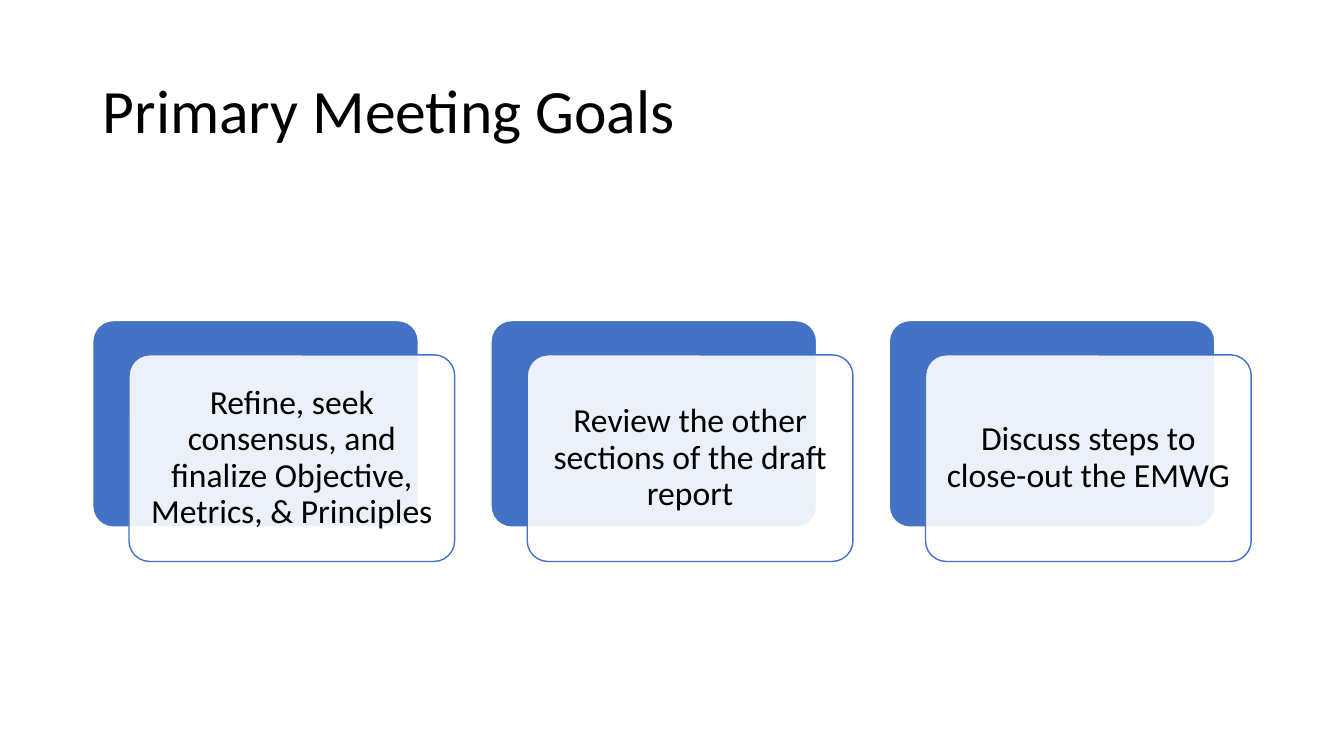
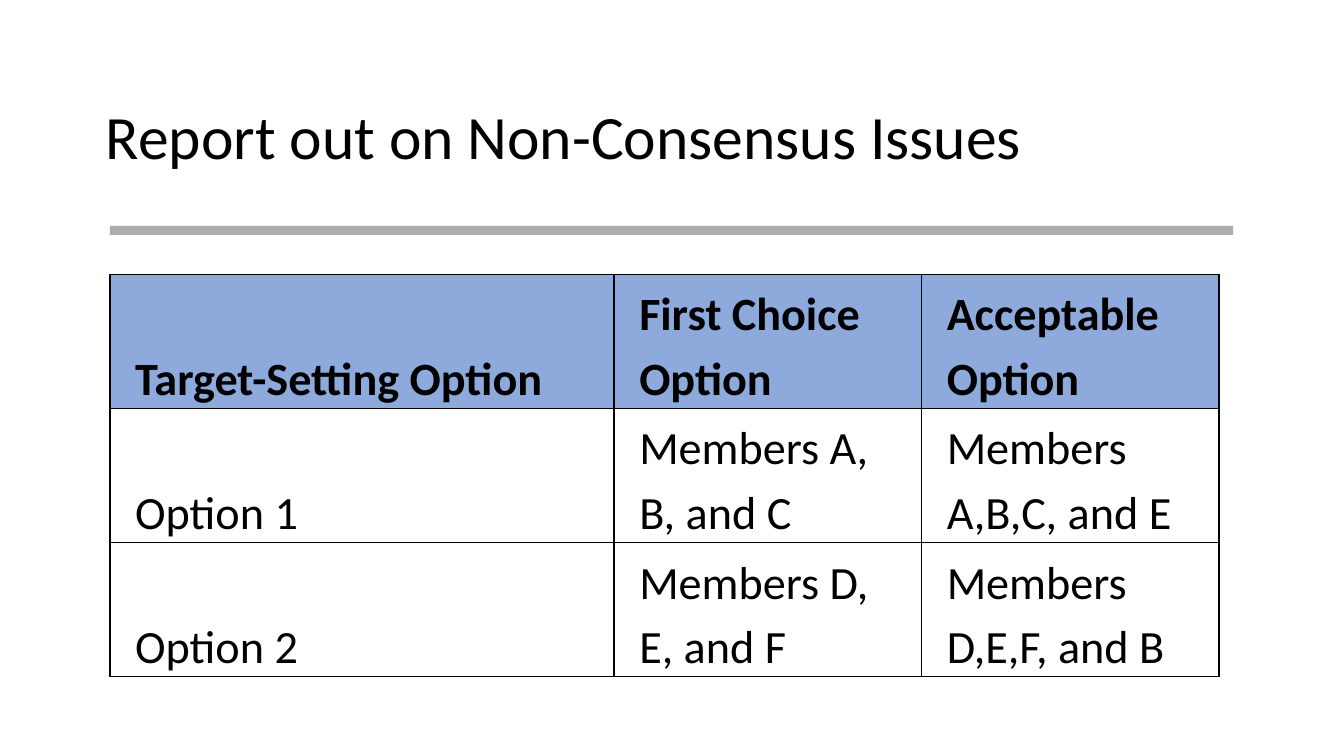
from lxml import etree
from pptx import Presentation
from pptx.dml.color import RGBColor
from pptx.enum.shapes import MSO_SHAPE as SHAPE
from pptx.enum.text import MSO_ANCHOR as ANCHOR, MSO_AUTO_SIZE as AUTO_SIZE, PP_ALIGN as ALIGN
from pptx.oxml.ns import qn
from pptx.util import Inches, Pt

BLACK = RGBColor(0x00, 0x00, 0x00)
WHITE = RGBColor(0xFF, 0xFF, 0xFF)
BLUE = RGBColor(0x44, 0x72, 0xC4)
HEADER_BLUE = RGBColor(0x8E, 0xA9, 0xDB)
GRAY = RGBColor(0x80, 0x80, 0x80)
FONT = "Calibri"
TITLE_ONLY = 5

GOALS = [
    "Refine, seek consensus, and finalize Objective, Metrics, & Principles",
    "Review the other sections of the draft report",
    "Discuss steps to close-out the EMWG",
]
OPTIONS = [
    ["Target-Setting Option", "First Choice Option", "Acceptable Option"],
    ["Option 1", "Members A, B, and C", "Members A,B,C, and E"],
    ["Option 2", "Members D, E, and F", "Members D,E,F, and B"],
]


def write_text(tf, text, size, bold=False, align=ALIGN.LEFT, spacing=0.9):
    tf.word_wrap = True
    p = tf.paragraphs[0]
    p.alignment = align
    p.line_spacing = spacing
    r = p.add_run()
    r.text = text
    r.font.name = FONT
    r.font.size = Pt(size)
    r.font.bold = bold
    r.font.color.rgb = BLACK


def set_margins(target, left, top, right, bottom):
    target.margin_left, target.margin_top = Inches(left), Inches(top)
    target.margin_right, target.margin_bottom = Inches(right), Inches(bottom)


def add_titled_slide(prs, title, left, top, width, height=1.45):
    s = prs.slides.add_slide(prs.slide_layouts[TITLE_ONLY])
    sp = s.shapes.title
    sp.left, sp.top = Inches(left), Inches(top)
    sp.width, sp.height = Inches(width), Inches(height)
    tf = sp.text_frame
    tf.auto_size = AUTO_SIZE.NONE
    tf.vertical_anchor = ANCHOR.MIDDLE
    write_text(tf, title, 44)
    return s


def add_box(s, kind, left, top, width, height, fill, line=None, opacity=100):
    sp = s.shapes.add_shape(kind, Inches(left), Inches(top), Inches(width), Inches(height))
    sp.shadow.inherit = False
    sp.fill.solid()
    sp.fill.fore_color.rgb = fill
    if opacity < 100:
        color = sp.fill._xPr.find(qn("a:solidFill"))[0]
        etree.SubElement(color, qn("a:alpha"), val=str(opacity * 1000))
    if line is None:
        sp.line.fill.background()
    else:
        sp.line.color.rgb = line
        sp.line.width = Pt(1)
    return sp


def add_goal_card(s, text, left, top, width=3.23, height=2.05):
    """Draw a blue card with a translucent text card shifted over it."""
    back = add_box(s, SHAPE.ROUNDED_RECTANGLE, left, top, width, height, BLUE, WHITE)
    front = add_box(s, SHAPE.ROUNDED_RECTANGLE, left + 0.36, top + 0.34, width, height,
                    WHITE, BLUE, opacity=90)
    for card in (back, front):
        card.adjustments[0] = 0.1
    tf = front.text_frame
    tf.vertical_anchor = ANCHOR.MIDDLE
    set_margins(tf, 0.1, 0.1, 0.1, 0.1)
    write_text(tf, text, 24, align=ALIGN.CENTER)


def set_borders(cell, color=BLACK, width=Pt(1)):
    tcPr = cell._tc.get_or_add_tcPr()
    for i, side in enumerate(("lnL", "lnR", "lnT", "lnB")):
        ln = etree.Element(qn(f"a:{side}"), w=str(width))
        fill = etree.SubElement(ln, qn("a:solidFill"))
        etree.SubElement(fill, qn("a:srgbClr"), val=str(color))
        tcPr.insert(i, ln)


def add_options_table(s, rows, left, top, col_widths=(5, 3.05, 2.95), row_height=1.33):
    frame = s.shapes.add_table(len(rows), len(col_widths), Inches(left), Inches(top),
                               Inches(sum(col_widths)), Inches(row_height * len(rows)))
    table = frame.table
    for column, width in zip(table.columns, col_widths):
        column.width = Inches(width)
    for i, row in enumerate(rows):
        is_header = i == 0
        for j, text in enumerate(row):
            cell = table.cell(i, j)
            cell.vertical_anchor = ANCHOR.BOTTOM
            set_margins(cell, 0.25, 0.03, 0.25, 0)
            if is_header:
                cell.fill.solid()
                cell.fill.fore_color.rgb = HEADER_BLUE
            else:
                cell.fill.background()
            set_borders(cell)
            write_text(cell.text_frame, text, 33, bold=is_header, spacing=1.15)


def build_goals_slide(prs):
    s = add_titled_slide(prs, "Primary Meeting Goals", 0.92, 0.4, 11.5)
    for i, goal in enumerate(GOALS):
        add_goal_card(s, goal, 0.92 + i * 3.95, 3.18)


def build_issues_slide(prs):
    s = add_titled_slide(prs, "Report out on Non-Consensus Issues", 0.95, 0.66, 11.43)
    add_box(s, SHAPE.RECTANGLE, 1.09, 2.24, 11.14, 0.09, GRAY, opacity=65)
    add_options_table(s, OPTIONS, 1.09, 2.72)


def main():
    prs = Presentation()
    prs.slide_width, prs.slide_height = Inches(13.33), Inches(7.5)
    build_goals_slide(prs)
    build_issues_slide(prs)
    prs.save("out.pptx")


if __name__ == "__main__":
    main()
